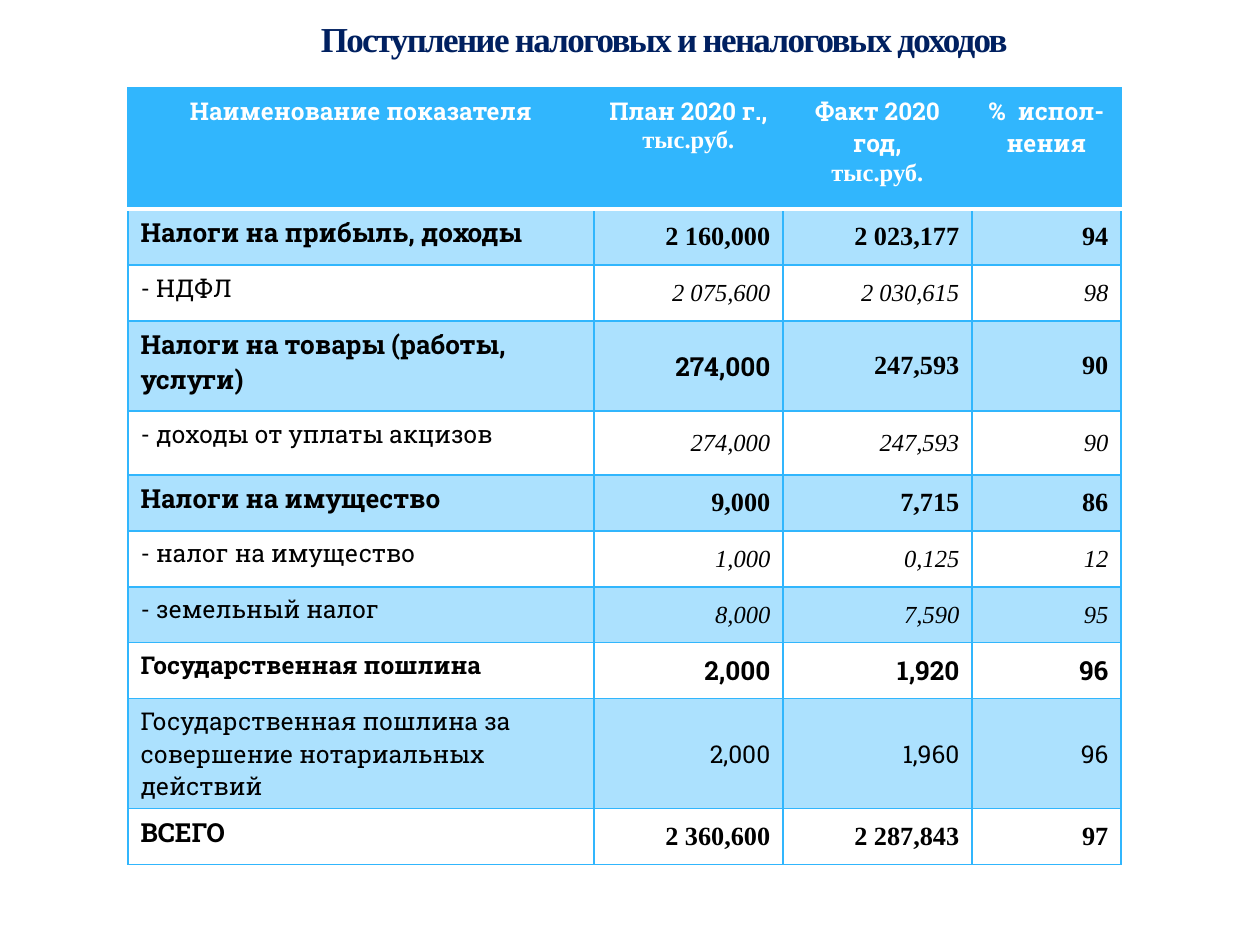
import pptx
import pptx.util
import pptx.dml.color
import pptx.enum.text
import lxml.etree

SLAB, ROMAN = "Roboto Slab", "Times New Roman"
BLUE, WHITE = "31B6FD", "FFFFFF"
NS = "http://schemas.openxmlformats.org/drawingml/2006/main"
ALIGN = pptx.enum.text.PP_ALIGN
ANCHOR = pptx.enum.text.MSO_ANCHOR
hue = pptx.dml.color.RGBColor.from_string


def px(n):
    return pptx.util.Emu(round(n * 914400 / 126))


def style(para, face, size, color, bold=False, slant=False, align=ALIGN.LEFT):
    font = para.font
    font.name, font.size = face, pptx.util.Pt(size)
    font.bold, font.italic = bold, slant
    font.color.rgb = hue(color)
    para.alignment = align


deck = pptx.Presentation()
deck.slide_width, deck.slide_height = px(1260), px(945)
slide = deck.slides.add_slide(deck.slide_layouts[6])

title = slide.shapes.add_textbox(px(203), px(0), px(922), px(78)).text_frame
title.word_wrap = True
title.vertical_anchor = ANCHOR.MIDDLE
title.text = "Поступление налоговых и неналоговых доходов"
style(title.paragraphs[0], ROMAN, 20, "002060", True, align=ALIGN.CENTER)
props = title.paragraphs[0].runs[0].font._element
props.set("spc", "-100")
props.insert(0, lxml.etree.fromstring(
    f'<a:ln xmlns:a="{NS}" w="3175"><a:solidFill><a:srgbClr val="AFCCDE">'
    '<a:alpha val="25000"/></a:srgbClr></a:solidFill></a:ln>'))

heads = [
    ["Наименование показателя"],
    ["План 2020 г.,", "тыс.руб."],
    ["Факт 2020 год,", "тыс.руб."],
    ["%  испол-нения"],
]
main = (15, 15, True, False, ROMAN)
sub = (14, 14, False, True, ROMAN)
fee = (14, 15, True, False, SLAB)
note = (14, 14, False, False, SLAB)
rows = [
    (56, main, "Налоги на прибыль, доходы", "2 160,000", "2 023,177", "94"),
    (56, sub, "- НДФЛ", "2 075,600", "2 030,615", "98"),
    (90, main, "Налоги на товары (работы, услуги)", "274,000", "247,593", "90"),
    (64, sub, "- доходы от уплаты акцизов", "274,000", "247,593", "90"),
    (56, main, "Налоги на имущество", "9,000", "7,715", "86"),
    (56, sub, "- налог на имущество", "1,000", "0,125", "12"),
    (56, sub, "- земельный налог", "8,000", "7,590", "95"),
    (56, fee, "Государственная пошлина", "2,000", "1,920", "96"),
    (110, note, "Государственная пошлина за совершение нотариальных действий",
     "2,000", "1,960", "96"),
    (56, main, "ВСЕГО", "2 360,600", "2 287,843", "97"),
]
wide = [466, 189, 189, 149]
tall = [121] + [row[0] for row in rows]

table = slide.shapes.add_table(
    len(tall), len(wide), px(128), px(88), px(sum(wide)), px(sum(tall))).table
for col, width in zip(table.columns, wide):
    col.width = px(width)
for line, height in zip(table.rows, tall):
    line.height = px(height)

for r in range(len(tall)):
    for c in range(len(wide)):
        cell = table.cell(r, c)
        for side in "LRTB":
            thick = (r == 0 and side == "B") or (r == 1 and side == "T")
            size, color = (38100, WHITE) if thick else (12700, BLUE)
            if r == 0 and (side == "L" and c > 0 or side == "R" and c < 3):
                size, color = 12700, BLUE
            cell._tc.get_or_add_tcPr().append(lxml.etree.fromstring(
                f'<a:ln{side} xmlns:a="{NS}" w="{size}"><a:solidFill>'
                f'<a:srgbClr val="{color}"/></a:solidFill></a:ln{side}>'))
        if r % 2 or r == 0:
            cell.fill.solid()
            cell.fill.fore_color.rgb = hue(BLUE)
        else:
            cell.fill.background()
        if r % 2:
            tint = cell._tc.tcPr.find(f"{{{NS}}}solidFill/{{{NS}}}srgbClr")
            lxml.etree.SubElement(tint, f"{{{NS}}}alpha", val="40000")

        if r == 0:
            cell.text = "\n".join(heads[c])
            for para, face in zip(cell.text_frame.paragraphs, (SLAB, ROMAN)):
                style(para, face, 14, WHITE, True, align=ALIGN.CENTER)
            continue
        kind, *texts = rows[r - 1][1:]
        first, size, bold, slant, face = kind
        cell.text = texts[c]
        para = cell.text_frame.paragraphs[0]
        if c == 0:
            style(para, SLAB, first, "000000", bold)
        else:
            cell.vertical_anchor = ANCHOR.MIDDLE
            if (r, c) == (3, 1):
                face = SLAB
            style(para, face, size, "000000", bold, slant, ALIGN.RIGHT)

deck.save("out.pptx")
